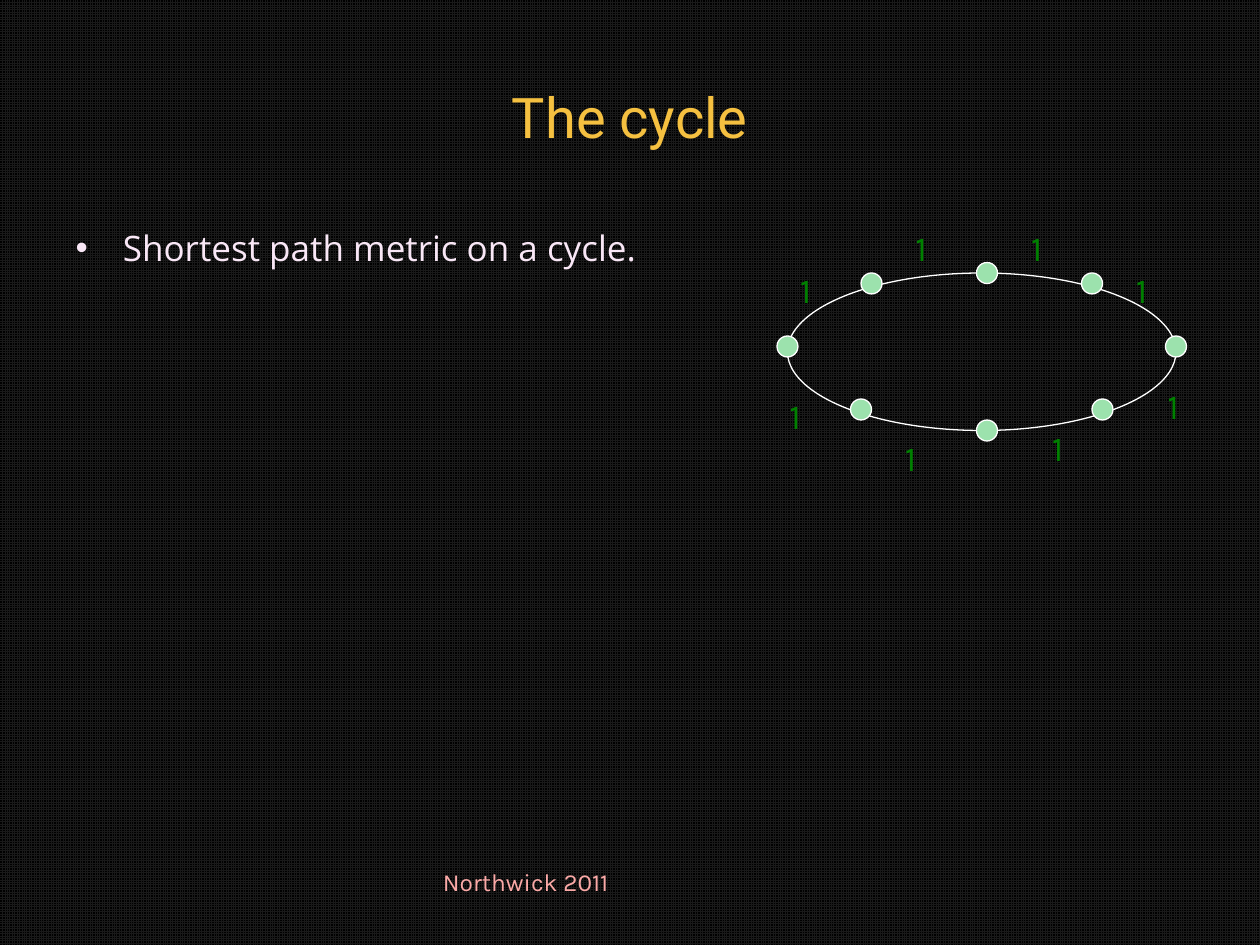
from dataclasses import dataclass

from pptx import Presentation
from pptx.dml.color import RGBColor
from pptx.enum.dml import MSO_PATTERN
from pptx.enum.shapes import MSO_SHAPE
from pptx.enum.text import MSO_ANCHOR, MSO_AUTO_SIZE, PP_ALIGN
from pptx.shapes.autoshape import Shape
from pptx.slide import Slide
from pptx.util import Pt

ELLIPSE = MSO_SHAPE.OVAL
SMALL_GRID = MSO_PATTERN.SMALL_GRID
MIDDLE, TOP = MSO_ANCHOR.MIDDLE, MSO_ANCHOR.TOP
LEFT, CENTER = PP_ALIGN.LEFT, PP_ALIGN.CENTER
NO_FIT, GROW = MSO_AUTO_SIZE.NONE, MSO_AUTO_SIZE.SHAPE_TO_FIT_TEXT

NODE_SIZE = 12
LABEL_WIDTH, LABEL_HEIGHT = 25, 31
BULLET_INDENT = 27


@dataclass(frozen=True)
class Box:
    """A rectangle in points."""
    left: float
    top: float
    width: float
    height: float

    def lengths(self) -> tuple:
        return Pt(self.left), Pt(self.top), Pt(self.width), Pt(self.height)


@dataclass(frozen=True)
class Edge:
    """The place of the weight label of one edge."""
    left: float
    top: float
    weight: str = "1"


CYCLE = Box(450, 156, 222, 90)

# Node centres, clockwise from the left
NODES = [(450, 198), (498, 162), (564, 156), (624, 162),
         (672, 198), (630, 234), (564, 246), (492, 234)]

# Edge labels, clockwise from the left
EDGES = [Edge(450, 150), Edge(516, 126), Edge(582, 126), Edge(642, 150),
         Edge(660, 216), Edge(594, 240), Edge(510, 246), Edge(444, 222)]


def color(value: str) -> RGBColor:
    return RGBColor.from_string(value)


def write(shape: Shape, text: str, *, font: str, size: float, fill: str,
          align=LEFT, anchor=TOP, wrap: bool = True, fit=NO_FIT):
    """Put one formatted paragraph in a shape and return the paragraph."""
    frame = shape.text_frame
    frame.word_wrap = wrap
    frame.auto_size = fit
    frame.vertical_anchor = anchor
    paragraph = frame.paragraphs[0]
    paragraph.alignment = align
    run = paragraph.add_run()
    run.text = text
    run.font.name = font
    run.font.size = Pt(size)
    run.font.color.rgb = color(fill)
    return paragraph


def place(shape: Shape, box: Box) -> None:
    shape.left, shape.top, shape.width, shape.height = box.lengths()


def add_ellipse(slide: Slide, box: Box, fill: str | None = None) -> None:
    ellipse = slide.shapes.add_shape(ELLIPSE, *box.lengths())
    ellipse.shadow.inherit = False
    if fill:
        ellipse.fill.solid()
        ellipse.fill.fore_color.rgb = color(fill)
    else:
        ellipse.fill.background()
    ellipse.line.color.rgb = color("FFFFFF")
    ellipse.line.width = Pt(0.75)


def add_node(slide: Slide, x: float, y: float) -> None:
    half = NODE_SIZE / 2
    add_ellipse(slide, Box(x - half, y - half, NODE_SIZE, NODE_SIZE), "9CE2AD")


def add_edge_label(slide: Slide, edge: Edge) -> None:
    box = Box(edge.left, edge.top, LABEL_WIDTH, LABEL_HEIGHT)
    label = slide.shapes.add_textbox(*box.lengths())
    write(label, edge.weight, font="Karla", size=20, fill="008000",
          wrap=False, fit=GROW)


def main() -> None:
    presentation = Presentation()
    presentation.slide_width, presentation.slide_height = Pt(720), Pt(540)
    slide = presentation.slides.add_slide(presentation.slide_layouts[1])

    # Background
    background = slide.background.fill
    background.patterned()
    background.pattern = SMALL_GRID
    background.fore_color.rgb = color("191919")
    background.back_color.rgb = color("000000")

    # Title and bullet
    title, body = slide.shapes.title, slide.placeholders[1]
    place(title, Box(36, 21.6, 648, 90))
    write(title, "The cycle", font="Roboto", size=32, fill="F5C040",
          align=CENTER, anchor=MIDDLE)
    place(body, Box(36, 126, 420.5, 356.4))
    bullet = write(body, "Shortest path metric on a cycle.",
                   font="Open Sans", size=20, fill="F9E7F6")
    bullet.space_before = Pt(4)
    properties = bullet._p.get_or_add_pPr()
    properties.set("marL", str(Pt(BULLET_INDENT)))
    properties.set("indent", str(-Pt(BULLET_INDENT)))

    # Cycle graph
    add_ellipse(slide, CYCLE)
    for x, y in NODES:
        add_node(slide, x, y)
    for edge in EDGES:
        add_edge_label(slide, edge)

    # Footer
    footer = slide.shapes.add_textbox(*Box(246, 492, 228, 37.5).lengths())
    write(footer, "Northwick 2011", font="Karla", size=14, fill="FBA9A7")

    presentation.save("out.pptx")


if __name__ == "__main__":
    main()
